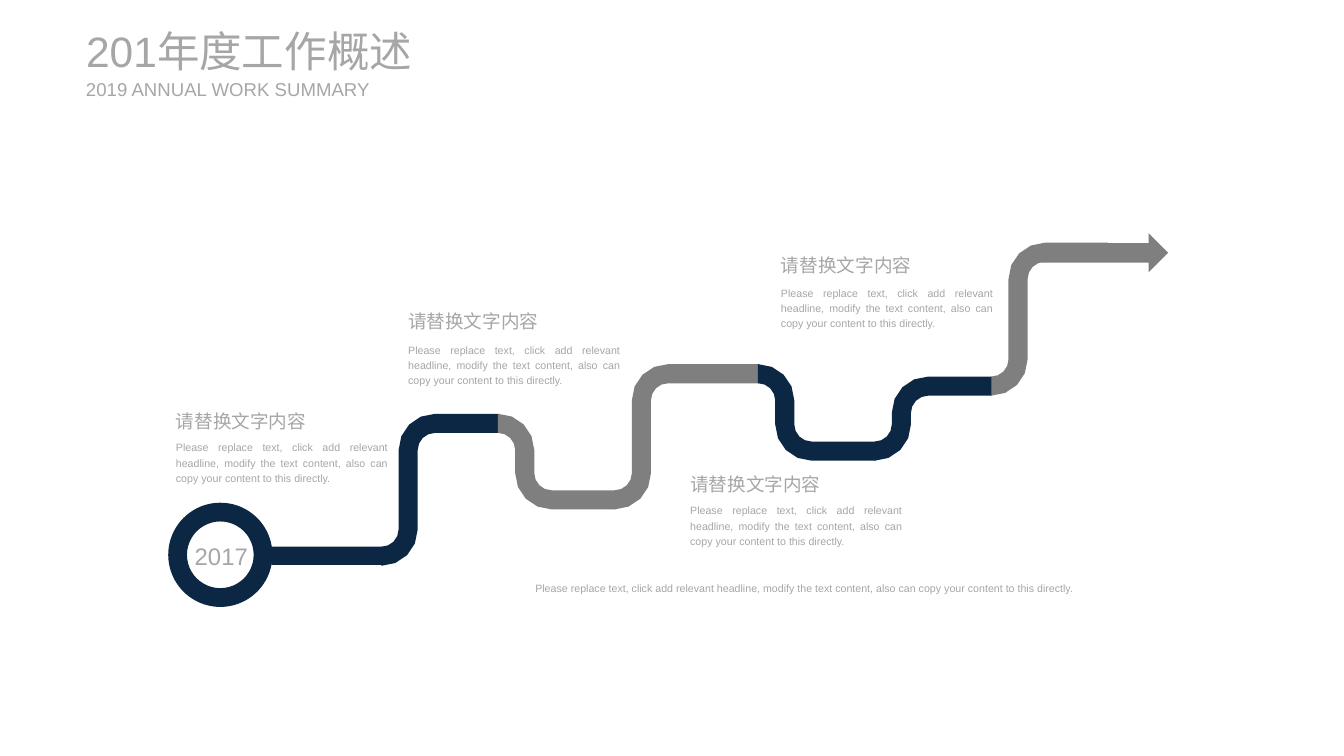
from itertools import pairwise
from math import cos, pi, sin

from pptx import Presentation
from pptx.dml.color import RGBColor
from pptx.enum.shapes import MSO_SHAPE
from pptx.enum.text import MSO_ANCHOR, MSO_AUTO_SIZE, PP_ALIGN
from pptx.util import Inches, Pt

RECTANGLE, DONUT, RIGHT_ARROW = MSO_SHAPE.RECTANGLE, MSO_SHAPE.DONUT, MSO_SHAPE.RIGHT_ARROW
TOP, MIDDLE = MSO_ANCHOR.TOP, MSO_ANCHOR.MIDDLE
LEFT, CENTER, JUSTIFY = PP_ALIGN.LEFT, PP_ALIGN.CENTER, PP_ALIGN.JUSTIFY
GROW = MSO_AUTO_SIZE.SHAPE_TO_FIT_TEXT

COLORS = {"navy": "0C2744", "gray": "7F7F7F", "text": "A6A6A6"}
FONT = "Arial"
HEADLINE = "请替换文字内容"
BODY = ("Please replace text, click add relevant headline, modify the text content, "
        "also can copy your content to this directly.")

presentation = Presentation()
presentation.slide_width, presentation.slide_height = Inches(14.06), Inches(7.91)
slide = presentation.slides.add_slide(presentation.slide_layouts[6])


def paint(shape, color):
    shape.shadow.inherit = False
    shape.fill.solid()
    shape.fill.fore_color.rgb = RGBColor.from_string(COLORS[color])
    shape.line.fill.background()


def add_text(shapes, box, text, size, align=LEFT, anchor=TOP, spacing=1.2):
    frame = shapes.add_textbox(*map(Inches, box)).text_frame
    frame.margin_left = frame.margin_right = frame.margin_top = frame.margin_bottom = 0
    frame.word_wrap = True
    frame.auto_size = GROW
    frame.vertical_anchor = anchor
    frame.text = text
    paragraph = frame.paragraphs[0]
    paragraph.alignment = align
    paragraph.line_spacing = spacing
    font = paragraph.runs[0].font
    font.name, font.size = FONT, Pt(size)
    font.color.rgb = RGBColor.from_string(COLORS["text"])


# Winding road: each piece bends twice between neighbouring joints
joints = [(4.0, 5.82), (5.22, 4.43), (6.44, 5.23), (7.94, 3.91),
          (9.16, 4.72), (10.38, 4.04), (11.59, 2.64)]
piece_colors = ["navy", "gray", "gray", "navy", "navy", "gray"]
bend_radius, half_width, overlap = 0.28, 0.1, 0.01
angles = [step * pi / 8 for step in range(5)]

for ((joint_x, y0), (x1, y1)), color in zip(pairwise(joints), piece_colors):
    x0 = joint_x - overlap
    direction = 1 if y1 > y0 else -1
    first_y, second_y = y0 + direction * bend_radius, y1 - direction * bend_radius
    second_x = x0 + 2 * bend_radius
    edges = []
    for offset in (half_width, -half_width):
        outer, inner = bend_radius + offset, bend_radius - offset
        edge = [(x0 + outer * sin(a), first_y - direction * outer * cos(a)) for a in angles]
        edge += [(second_x - inner * cos(a), second_y + direction * inner * sin(a)) for a in angles]
        edge.append((x1, second_y + direction * inner))
        edges.append(edge)
    outline = [(Inches(x), Inches(y)) for x, y in edges[0] + edges[1][::-1]]
    builder = slide.shapes.build_freeform(*outline[0])
    builder.add_line_segments(outline[1:], close=True)
    paint(builder.convert_to_shape(), color)

# Starting ring, first stretch and arrow tip
for kind, box, color in [
    (DONUT, (1.76, 5.26, 1.09, 1.09), "navy"),
    (RECTANGLE, (2.84, 5.72, 1.16, 0.19), "navy"),
    (RIGHT_ARROW, (10.9, 2.44, 1.32, 0.41), "gray"),
]:
    shape = slide.shapes.add_shape(kind, *map(Inches, box))
    paint(shape, color)
    if kind == DONUT:
        shape.adjustments[0] = 0.18
add_text(slide.shapes, (1.86, 5.61, 0.91, 0.36), "2017", 18, CENTER)

# Milestones: headline above body
for left, headline_top, headline_width, body_top in [
    (4.27, 3.2, 1.83, 3.57), (7.22, 4.9, 1.91, 5.25),
    (8.17, 2.61, 1.97, 2.97), (1.84, 4.24, 1.75, 4.59),
]:
    group = slide.shapes.add_group_shape()
    add_text(group.shapes, (left, headline_top, headline_width, 0.28), HEADLINE, 14)
    add_text(group.shapes, (left, body_top, 2.22, 0.48), BODY, 8, JUSTIFY, MIDDLE)

# Footnote and title
add_text(slide.shapes, (5.6, 6.06, 6.76, 0.15), BODY, 8, JUSTIFY)
add_text(slide.shapes, (0.9, 0.26, 4.32, 0.54), "201年度工作概述", 32, anchor=MIDDLE, spacing=1.0)
add_text(slide.shapes, (0.9, 0.81, 3.07, 0.24), "2019 ANNUAL WORK SUMMARY", 14,
         anchor=MIDDLE, spacing=1.0)

presentation.save("out.pptx")
